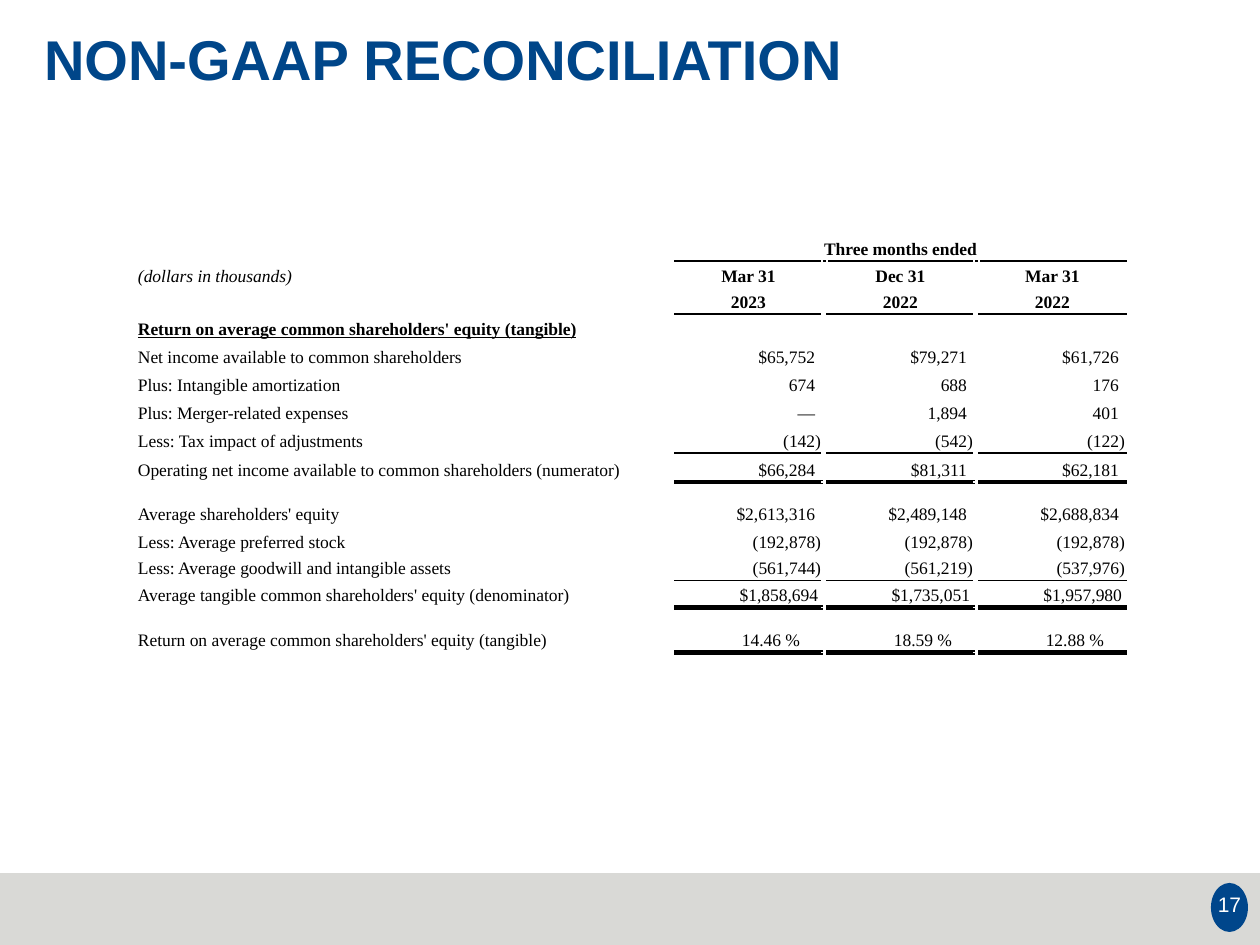
import pptx
import pptx.util
import pptx.oxml
import pptx.oxml.ns
import pptx.dml.color
import pptx.enum.shapes
import pptx.enum.text

PX = 914400 / 126
COLORS = {"title": "004689", "badge": "00468B", "band": "D9D9D6",
          "ink": "000000", "paper": "FFFFFF"}
ALIGN = pptx.enum.text.PP_ALIGN
ANCHOR = pptx.enum.text.MSO_ANCHOR
SHAPE = pptx.enum.shapes.MSO_SHAPE


def px(*lengths):
    return [pptx.util.Emu(round(length * PX)) for length in lengths]


def add_span(para, text, size, color, font_name, bold=False):
    span = para.add_run()
    span.text = text
    span.font.size = pptx.util.Pt(size)
    span.font.name = font_name
    span.font.bold = bold
    span.font.color.rgb = pptx.dml.color.RGBColor.from_string(COLORS[color])
    return span


deck = pptx.Presentation()
deck.slide_width, deck.slide_height = px(1260, 945)
page = deck.slides.add_slide(deck.slide_layouts[5])

# Footer band and page number
for kind, bounds, color in [(SHAPE.RECTANGLE, (0, 873, 1260, 72), "band"),
                            (SHAPE.OVAL, (1211, 883, 37, 49), "badge")]:
    shape = page.shapes.add_shape(kind, *px(*bounds))
    shape.shadow.inherit = False
    shape.fill.solid()
    shape.fill.fore_color.rgb = pptx.dml.color.RGBColor.from_string(COLORS[color])
    shape.line.fill.background()

# Title and page number text
title = page.shapes.title
title.left, title.top, title.width, title.height = px(31, 24, 1218, 144)
number = page.shapes.add_textbox(*px(1200, 882, 59, 49))
for box, text, size, color, align, anchor in [
        (title, "NON-GAAP RECONCILIATION", 32, "title", ALIGN.LEFT, ANCHOR.TOP),
        (number, "17", 12, "paper", ALIGN.CENTER, ANCHOR.MIDDLE)]:
    frame = box.text_frame
    frame.word_wrap = True
    frame.auto_size = pptx.enum.text.MSO_AUTO_SIZE.NONE
    frame.vertical_anchor = anchor
    frame.margin_left, frame.margin_top, frame.margin_right, frame.margin_bottom = px(13, 8, 13, 13)
    para = frame.paragraphs[0]
    para.alignment = align
    add_span(para, text, size, color, "Arial", bold=box is title)
title.text_frame.paragraphs[0].line_spacing = 0.9

# Reconciliation table
rows = [
    ("", "Three months ended"),
    ("(dollars in thousands)", "Mar 31", "Dec 31", "Mar 31"),
    ("", "2023", "2022", "2022"),
    ("Return on average common shareholders' equity (tangible)",),
    ("Net income available to common shareholders", "$65,752", "$79,271", "$61,726"),
    ("Plus: Intangible amortization", "674", "688", "176"),
    ("Plus: Merger-related expenses", "—", "1,894", "401"),
    ("Less: Tax impact of adjustments", "(142)", "(542)", "(122)"),
    ("Operating net income available to common shareholders (numerator)",
     "$66,284", "$81,311", "$62,181"),
    ("",),
    ("Average shareholders' equity", "$2,613,316", "$2,489,148", "$2,688,834"),
    ("Less: Average preferred stock", "(192,878)", "(192,878)", "(192,878)"),
    ("Less: Average goodwill and intangible assets", "(561,744)", "(561,219)", "(537,976)"),
    ("Average tangible common shareholders' equity (denominator)",
     "$1,858,694", "$1,735,051", "$1,957,980"),
    ("",),
    ("Return on average common shareholders' equity (tangible)",
     "14.46 %", "18.59 %", "12.88 %"),
]
row_heights = [27, 27, 26, 27, 28, 28, 28, 28, 29, 17, 27, 28, 27, 27, 18, 27]
column_widths = [469, 72, 147, 5, 147, 5, 147]
value_columns = [2, 4, 6]
header_rows = 3
section_row, denominator_row = 3, 13
wide_label_rows = [3, 4, 8, 10, 12, 13, 15]
rule_below = {0: 1, 2: 1, 7: 1, 8: 3, 12: 1, 13: 3, 15: 3}

table = page.shapes.add_table(
    len(rows), len(column_widths),
    *px(134, 234, sum(column_widths), sum(row_heights))).table
table.first_row = False
table.horz_banding = False
for column, width in zip(table.columns, px(*column_widths)):
    column.width = width
for row, height in zip(table.rows, px(*row_heights)):
    row.height = height

table.cell(0, 2).merge(table.cell(0, 6))
for r in wide_label_rows:
    table.cell(r, 0).merge(table.cell(r, 1))

for r, (label, *values) in enumerate(rows):
    texts = dict(zip(value_columns, values))
    texts[0] = label
    for c in range(len(column_widths)):
        cell = table.cell(r, c)
        text = texts.get(c, "")
        is_value = c > 0 and r >= header_rows
        is_percent = text.endswith("%")

        left, right = 4, 4
        if is_percent:
            left, right = 67, 1
        elif is_value:
            left = 0
            if r != denominator_row:
                right = 1 if text.endswith(")") else 7
        if c in (3, 5):
            left = right = 0
        cell.margin_left, cell.margin_top, cell.margin_right, cell.margin_bottom = px(left, 0, right, 2)
        cell.vertical_anchor = ANCHOR.BOTTOM

        para = cell.text_frame.paragraphs[0]
        para.line_spacing = 1.0
        if c == 0 or is_percent:
            para.alignment = ALIGN.LEFT
        else:
            para.alignment = ALIGN.RIGHT if is_value else ALIGN.CENTER
        if text:
            bold = r == section_row or (c > 0 and r < header_rows)
            span = add_span(para, text, 10, "ink", "Times New Roman", bold)
            span.font.italic = c == 0 and r == 1
            span.font.underline = c == 0 and r == section_row
        else:
            # A small end mark keeps empty cells from stretching their row
            pptx.oxml.ns.qn("a:endParaRPr")
            mark = para._p.get_or_add_endParaRPr()
            mark.set("sz", "600")

        def_rule = {"L": 0, "R": 0, "T": 0, "B": 0}
        for side, ruled_row in (("T", r - 1), ("B", r)):
            if c in value_columns or (ruled_row == 0 and c > 1):
                def_rule[side] = rule_below.get(ruled_row, 0)
        properties = cell._tc.get_or_add_tcPr()
        for side, weight in def_rule.items():
            color = COLORS["ink" if weight else "paper"]
            properties.append(pptx.oxml.parse_xml(
                f'<a:ln{side} {pptx.oxml.ns.nsdecls("a")} w="{max(weight, 1) * 12700}">'
                f'<a:solidFill><a:srgbClr val="{color}"/></a:solidFill></a:ln{side}>'))
        cell.fill.background()

deck.save("out.pptx")
